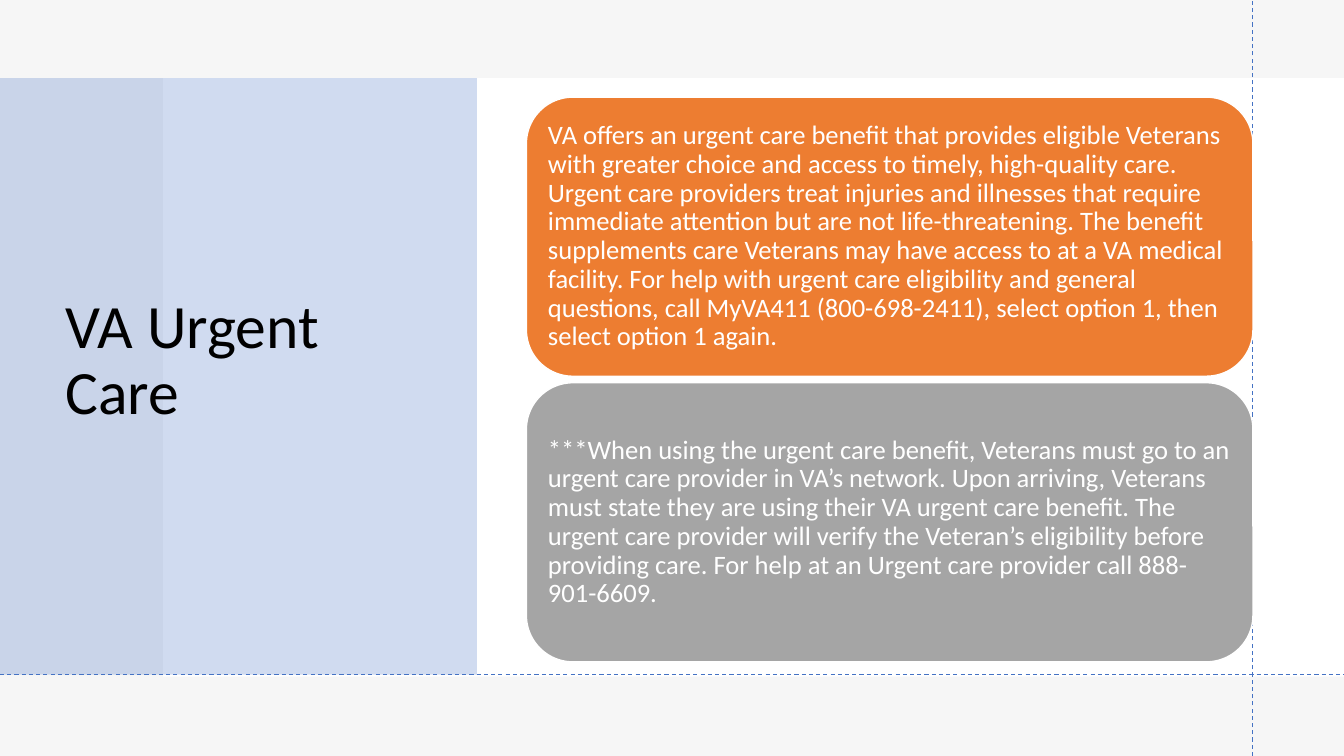
"""Builds the VA Urgent Care slide with a title panel and two text cards."""
from dataclasses import dataclass

from lxml.etree import SubElement
from pptx import Presentation
from pptx.dml.color import RGBColor
from pptx.dml.fill import FillFormat
from pptx.enum.dml import MSO_LINE
from pptx.enum.shapes import MSO_CONNECTOR, MSO_SHAPE
from pptx.enum.text import MSO_ANCHOR, MSO_AUTO_SIZE, PP_ALIGN
from pptx.oxml.ns import qn
from pptx.slide import Slide
from pptx.text.text import TextFrame
from pptx.util import Pt


@dataclass(frozen=True)
class Theme:
    font: str = "Calibri"
    title_size: float = 44
    card_size: float = 19
    line_spacing: float = 0.9
    white: str = "FFFFFF"
    black: str = "000000"
    mist: str = "E7E6E6"
    blue: str = "4472C4"
    orange: str = "ED7D31"
    gray: str = "A5A5A5"


@dataclass(frozen=True)
class Panel:
    left: float
    top: float
    width: float
    height: float
    color: str
    opacity: int = 100
    rotation: int = 0


@dataclass(frozen=True)
class Guide:
    start: tuple[float, float]
    end: tuple[float, float]


@dataclass(frozen=True)
class Card:
    color: str
    text: str


THEME = Theme()
WIDTH, HEIGHT = 960, 540
CARD_LEFT, CARD_TOP, CARD_WIDTH, CARD_HEIGHT = 376, 69.4, 519, 199.4
CARD_PITCH = 204
CARD_INSET = 5.7
GUIDE_X, GUIDE_Y = 895, 481.7

PANELS = (
    Panel(0, 0, WIDTH, HEIGHT, THEME.white),
    Panel(0, 0, WIDTH, HEIGHT, THEME.mist, 35),
    Panel(116.5, 55.8, 843.5, 427.5, THEME.white),
    Panel(-42.7, 98.5, 426, 340.6, THEME.blue, 25, 270),
)
GUIDES = (
    Guide((GUIDE_X, HEIGHT), (GUIDE_X, 0)),
    Guide((0, GUIDE_Y), (WIDTH, GUIDE_Y)),
)
CARDS = (
    Card(
        THEME.orange,
        "VA offers an urgent care benefit that provides eligible Veterans with greater choice "
        "and access to timely, high-quality care. Urgent care providers treat injuries and "
        "illnesses that require immediate attention but are not life-threatening. The benefit "
        "supplements care Veterans may have access to at a VA medical facility. For help with "
        "urgent care eligibility and general questions, call MyVA411 (800-698-2411), select "
        "option 1, then select option 1 again.",
    ),
    Card(
        THEME.gray,
        "***When using the urgent care benefit, Veterans must go to an urgent care provider in "
        "VA’s network. Upon arriving, Veterans must state they are using their VA urgent care "
        "benefit. The urgent care provider will verify the Veteran’s eligibility before "
        "providing care. For help at an Urgent care provider call 888-901-6609.",
    ),
)


def paint(fill: FillFormat, color: str) -> None:
    fill.solid()
    fill.fore_color.rgb = RGBColor.from_string(color)


def write(frame: TextFrame, text: str, size: float, color: str) -> None:
    frame.word_wrap = True
    frame.auto_size = MSO_AUTO_SIZE.NONE
    frame.vertical_anchor = MSO_ANCHOR.MIDDLE
    para = frame.paragraphs[0]
    para.alignment = PP_ALIGN.LEFT
    para.line_spacing = THEME.line_spacing
    span = para.add_run()
    span.text = text
    span.font.name = THEME.font
    span.font.size = Pt(size)
    span.font.color.rgb = RGBColor.from_string(color)


def draw_panel(page: Slide, panel: Panel) -> None:
    box = page.shapes.add_shape(
        MSO_SHAPE.RECTANGLE, Pt(panel.left), Pt(panel.top), Pt(panel.width), Pt(panel.height)
    )
    box.shadow.inherit = False
    box.rotation = panel.rotation
    box.line.fill.background()
    paint(box.fill, panel.color)
    if panel.opacity < 100:
        tint = box._element.spPr.find(qn("a:solidFill"))[0]
        SubElement(tint, qn("a:alpha"), val=str(panel.opacity * 1000))


def draw_title(page: Slide) -> None:
    title = page.shapes.title
    title.left, title.top, title.width, title.height = Pt(39.6), Pt(53.3), Pt(284.4), Pt(409.7)
    write(title.text_frame, "VA Urgent Care", THEME.title_size, THEME.black)
    title._element.getparent().append(title._element)


def draw_guide(page: Slide, guide: Guide) -> None:
    line = page.shapes.add_connector(
        MSO_CONNECTOR.STRAIGHT, *map(Pt, guide.start), *map(Pt, guide.end)
    )
    line.line.color.rgb = RGBColor.from_string(THEME.blue)
    line.line.width = Pt(0.75)
    line.line.dash_style = MSO_LINE.DASH
    SubElement(line._element.spPr, qn("a:effectLst"))


def draw_card(page: Slide, card: Card, top: float) -> None:
    box = page.shapes.add_shape(
        MSO_SHAPE.ROUNDED_RECTANGLE, Pt(CARD_LEFT), Pt(top), Pt(CARD_WIDTH), Pt(CARD_HEIGHT)
    )
    box.shadow.inherit = False
    paint(box.fill, card.color)
    box.line.color.rgb = RGBColor.from_string(THEME.white)
    box.line.width = Pt(1)
    frame = box.text_frame
    frame.margin_left = frame.margin_right = Pt(CARD_INSET)
    frame.margin_top = frame.margin_bottom = Pt(CARD_INSET)
    write(frame, card.text, THEME.card_size, THEME.white)


def main() -> None:
    deck = Presentation()
    deck.slide_width, deck.slide_height = Pt(WIDTH), Pt(HEIGHT)
    page = deck.slides.add_slide(deck.slide_layouts.get_by_name("Title Only"))
    paint(page.background.fill, THEME.mist)
    for panel in PANELS:
        draw_panel(page, panel)
    draw_title(page)
    for guide in GUIDES:
        draw_guide(page, guide)
    for index, card in enumerate(CARDS):
        draw_card(page, card, CARD_TOP + index * CARD_PITCH)
    deck.save("out.pptx")


if __name__ == "__main__":
    main()
